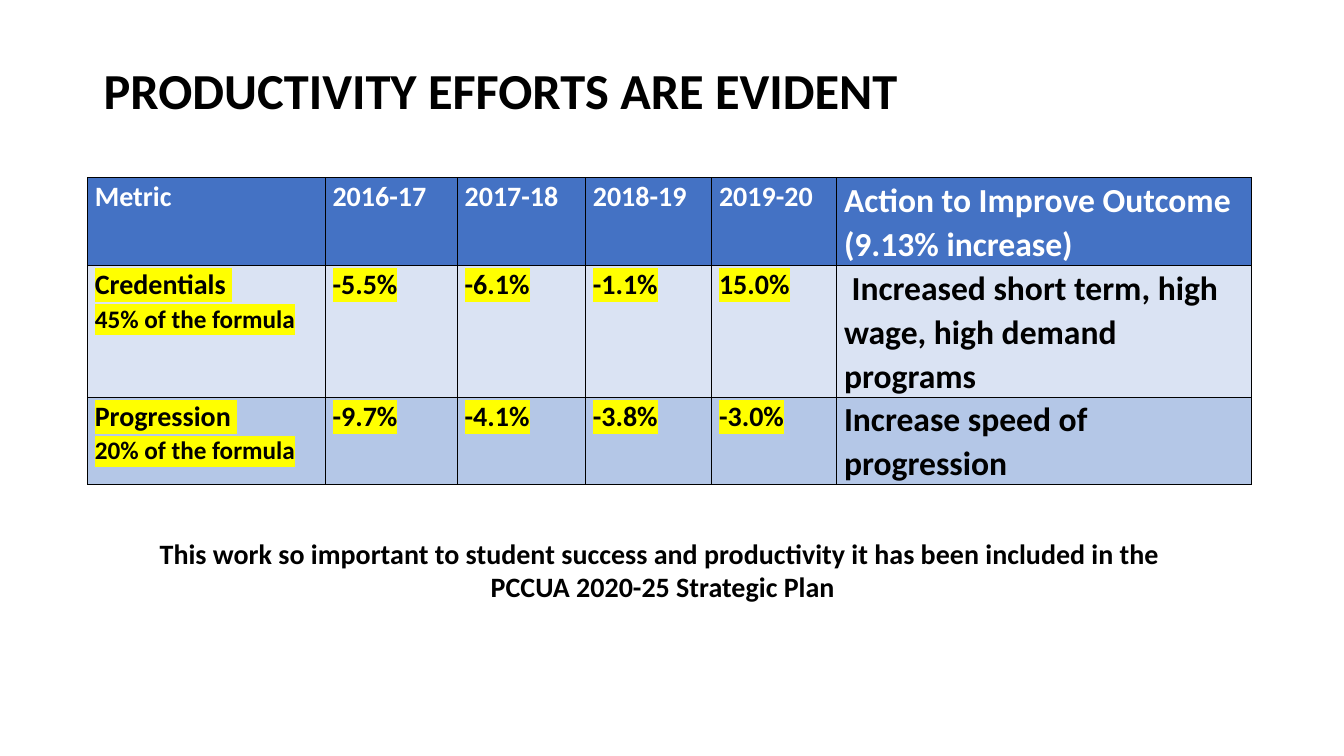
from dataclasses import dataclass

import pptx
import pptx.dml.color
import pptx.enum.text
import pptx.oxml
import pptx.oxml.ns
import pptx.util
from pptx.dml.color import RGBColor
from pptx.enum.text import MSO_ANCHOR, MSO_AUTO_SIZE, PP_ALIGN
from pptx.util import Cm

BLACK = RGBColor(0x00, 0x00, 0x00)
WHITE = RGBColor(0xFF, 0xFF, 0xFF)
YELLOW = RGBColor(0xFF, 0xFF, 0x00)
HEADER_BLUE = RGBColor(0x44, 0x72, 0xC4)
PALE_BLUE = RGBColor(0xDA, 0xE3, 0xF3)
LIGHT_BLUE = RGBColor(0xB4, 0xC7, 0xE7)

FONT = "Calibri"
COLUMN_WIDTHS = (5.99, 3.33, 3.23, 3.18, 3.15, 10.44)


@dataclass(frozen=True)
class MetricRow:
    metric: str
    share: str
    years: tuple[str, ...]
    action: str
    height: float
    fill: RGBColor
    color: RGBColor = BLACK
    highlight: RGBColor | None = YELLOW


ROWS = (
    MetricRow("Metric", "", ("2016-17", "2017-18", "2018-19", "2019-20"),
              "Action to Improve Outcome (9.13% increase)",
              2.2, HEADER_BLUE, WHITE, None),
    MetricRow("Credentials ", "45% of the formula",
              ("-5.5%", "-6.1%", "-1.1%", "15.0%"),
              " Increased short term, high wage, high demand programs",
              3.3, PALE_BLUE),
    MetricRow("Progression ", "20% of the formula",
              ("-9.7%", "-4.1%", "-3.8%", "-3.0%"),
              "Increase speed of progression",
              2.2, LIGHT_BLUE),
)


def write(frame, text: str, *, size: float, color: RGBColor = BLACK,
          align: PP_ALIGN = PP_ALIGN.LEFT, spacing: float = 1.0,
          highlight: RGBColor | None = None, new_paragraph: bool = False) -> None:
    """Write one bold paragraph, into the first paragraph or a new one."""
    paragraph = frame.add_paragraph() if new_paragraph else frame.paragraphs[0]
    paragraph.alignment = align
    paragraph.line_spacing = spacing
    run = paragraph.add_run()
    run.text = text
    run.font.name = FONT
    run.font.size = pptx.util.Pt(size)
    run.font.bold = True
    run.font.color.rgb = color
    if highlight is not None:
        marker = pptx.oxml.parse_xml(
            f'<a:highlight {pptx.oxml.ns.nsdecls("a")}>'
            f'<a:srgbClr val="{highlight}"/></a:highlight>')
        run.font.fill._xPr.find(pptx.oxml.ns.qn("a:solidFill")).addnext(marker)


def format_cell(cell, fill: RGBColor) -> None:
    """Set the margins, fill and thin black borders of a cell."""
    cell.margin_left = cell.margin_right = Cm(0.18)
    cell.margin_top = cell.margin_bottom = 0
    cell.fill.solid()
    cell.fill.fore_color.rgb = fill
    properties = cell._tc.get_or_add_tcPr()
    for position, side in enumerate(("lnL", "lnR", "lnT", "lnB")):
        border = pptx.oxml.parse_xml(
            f'<a:{side} {pptx.oxml.ns.nsdecls("a")} w="{pptx.util.Pt(1)}">'
            f'<a:solidFill><a:srgbClr val="{BLACK}"/></a:solidFill></a:{side}>')
        properties.insert(position, border)


def fill_row(table, index: int, row: MetricRow) -> None:
    """Write one metric with its yearly values and its action."""
    table.rows[index].height = Cm(row.height)
    texts = (row.metric, *row.years, row.action)
    last = len(texts) - 1
    for column, text in enumerate(texts):
        cell = table.cell(index, column)
        format_cell(cell, row.fill)
        write(cell.text_frame, text, size=24 if column == last else 20,
              color=row.color, spacing=1.07,
              highlight=None if column == last else row.highlight)
    if row.share:
        write(table.cell(index, 0).text_frame, row.share, size=18,
              color=row.color, spacing=1.07, highlight=row.highlight,
              new_paragraph=True)


def main() -> None:
    presentation = pptx.Presentation()
    presentation.slide_width = Cm(33.87)
    presentation.slide_height = Cm(19.05)
    slide = presentation.slides.add_slide(presentation.slide_layouts[5])

    # Title
    title = slide.shapes.title
    title.left, title.top = Cm(2.36), Cm(1.19)
    title.width, title.height = Cm(30.05), Cm(2.31)
    title.text_frame.auto_size = MSO_AUTO_SIZE.NONE
    title.text_frame.vertical_anchor = MSO_ANCHOR.MIDDLE
    write(title.text_frame, "PRODUCTIVITY EFFORTS ARE EVIDENT", size=36, spacing=0.9)

    # Metrics table
    metrics = slide.shapes.add_table(
        len(ROWS), len(COLUMN_WIDTHS), Cm(2.21), Cm(4.48),
        Cm(sum(COLUMN_WIDTHS)), Cm(sum(row.height for row in ROWS))).table
    metrics.horz_banding = False
    for column, width in zip(metrics.columns, COLUMN_WIDTHS):
        column.width = Cm(width)
    for index, row in enumerate(ROWS):
        fill_row(metrics, index, row)

    # Closing statement
    statement = slide.shapes.add_textbox(
        Cm(0.74), Cm(13.39), Cm(31.93), Cm(1.96)).text_frame
    statement.word_wrap = True
    statement.auto_size = MSO_AUTO_SIZE.SHAPE_TO_FIT_TEXT
    write(statement, "This work so important to student success and productivity "
          "it has been included in the ", size=20, align=PP_ALIGN.CENTER)
    write(statement, "PCCUA 2020-25 Strategic Plan", size=20,
          align=PP_ALIGN.CENTER, new_paragraph=True)

    presentation.save("out.pptx")


if __name__ == "__main__":
    main()
